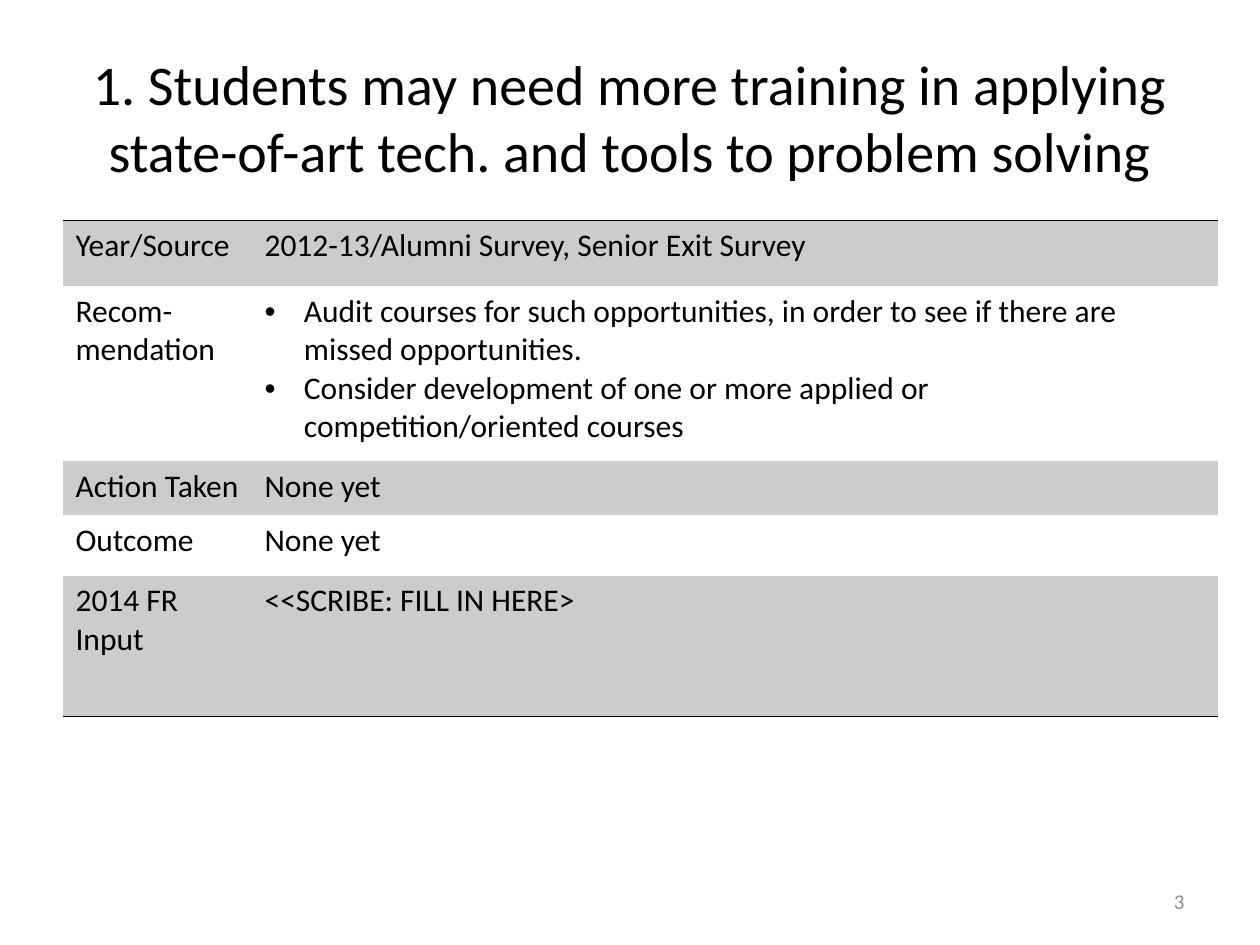
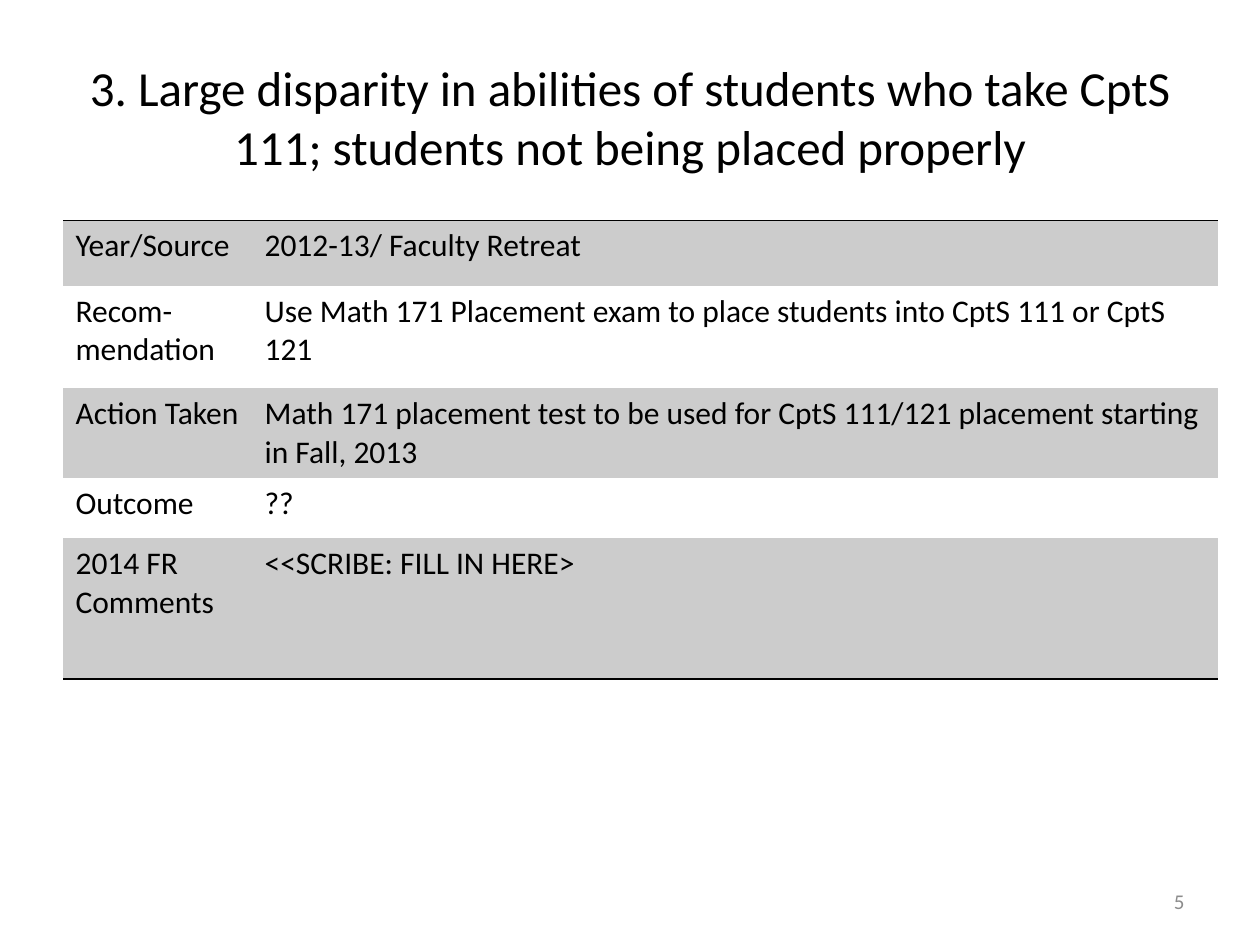
from lxml import etree
from pptx import Presentation
from pptx.dml.color import RGBColor
from pptx.enum.text import MSO_ANCHOR as ANCHOR, PP_ALIGN as ALIGN
from pptx.oxml import parse_xml
from pptx.oxml.ns import nsdecls, qn
from pptx.util import Pt

FONT = "Calibri"
BLACK, BAND, GREY = "000000", "CCCCCC", "8C8C8C"
PLAIN_TABLE_STYLE = "{2D5ABB26-0587-4C30-8999-92F81FD0307C}"
LEFT = 36
COLUMN_WIDTHS = (108, 552)
BULLET_INDENT = 22.5

SLIDES = [
    dict(
        title="1. Students may need more training in applying "
              "state-of-art tech. and tools to problem solving",
        title_size=32,
        number=3,
        row_heights=(37.5, 100, 31, 34.5, 80.5),
        rows=[
            ("Year/Source", "2012-13/Alumni Survey, Senior Exit Survey"),
            ("Recom-\nmendation", [
                "Audit courses for such opportunities, in order to see "
                "if there are missed opportunities.",
                "Consider development of one or more applied or "
                "competition/oriented courses",
            ]),
            ("Action Taken", "None yet"),
            ("Outcome", "None yet"),
            ("2014 FR Input", "<<SCRIBE: FILL IN HERE>"),
        ],
    ),
    dict(
        title="3. Large disparity in abilities of students who take "
              "CptS 111; students not being placed properly",
        title_size=28,
        number=5,
        row_heights=(37.5, 58.5, 31, 34.5, 80.5),
        rows=[
            ("Year/Source", "2012-13/ Faculty Retreat"),
            ("Recom-\nmendation",
             "Use Math 171 Placement exam to place students into "
             "CptS 111 or CptS 121"),
            ("Action Taken",
             "Math 171 placement test to be used for CptS 111/121 "
             "placement starting in Fall, 2013"),
            ("Outcome", "??"),
            ("2014 FR Comments", "<<SCRIBE: FILL IN HERE>"),
        ],
    ),
]


def rgb(color):
    return RGBColor.from_string(color)


def write(tf, text, size=18, color=BLACK, align=ALIGN.LEFT):
    """Write one paragraph per line, or bulleted paragraphs for a list."""
    bulleted = isinstance(text, list)
    lines = text if bulleted else text.split("\n")
    for i, line in enumerate(lines):
        p = tf.paragraphs[0] if i == 0 else tf.add_paragraph()
        p.alignment = align
        r = p.add_run()
        r.text = line
        r.font.name = FONT
        r.font.size = Pt(size)
        r.font.color.rgb = rgb(color)
        if bulleted:
            add_bullet(p)


def add_bullet(p):
    pPr = p._p.get_or_add_pPr()
    pPr.set("marL", str(Pt(BULLET_INDENT)))
    pPr.set("indent", str(-Pt(BULLET_INDENT)))
    etree.SubElement(pPr, qn("a:buFont")).set("typeface", "Arial")
    etree.SubElement(pPr, qn("a:buChar")).set("char", "•")


def add_rule(cell, side):
    """Draw a black line on the cell's top ("T") or bottom ("B") side."""
    cell._tc.get_or_add_tcPr().insert(0, parse_xml(
        f'<a:ln{side} {nsdecls("a")} w="{Pt(1)}"><a:solidFill>'
        f'<a:srgbClr val="{BLACK}"/></a:solidFill></a:ln{side}>'))


def set_title(slide, text, size):
    title = slide.shapes.title
    title.left, title.top = Pt(LEFT), Pt(21.6)
    title.width, title.height = Pt(648), Pt(90)
    title.text_frame.vertical_anchor = ANCHOR.MIDDLE
    write(title.text_frame, text, size=size, align=ALIGN.CENTER)


def add_review_table(slide, rows, row_heights):
    frame = slide.shapes.add_table(
        len(rows), len(COLUMN_WIDTHS), Pt(LEFT), Pt(126),
        Pt(sum(COLUMN_WIDTHS)), Pt(sum(row_heights)))
    table = frame.table
    table.first_row = table.horz_banding = False
    table._tbl.tblPr.find(qn("a:tableStyleId")).text = PLAIN_TABLE_STYLE
    for column, width in zip(table.columns, COLUMN_WIDTHS):
        column.width = Pt(width)
    for i, (row, height) in enumerate(zip(rows, row_heights)):
        table.rows[i].height = Pt(height)
        for j, text in enumerate(row):
            cell = table.cell(i, j)
            write(cell.text_frame, text)
            if i % 2 == 0:
                cell.fill.solid()
                cell.fill.fore_color.rgb = rgb(BAND)
            else:
                cell.fill.background()
            if i == 0:
                add_rule(cell, "T")
            if i == len(rows) - 1:
                add_rule(cell, "B")


def add_page_number(slide, number):
    sp = slide.shapes.add_textbox(Pt(516), Pt(500.5), Pt(168), Pt(28.75))
    tf = sp.text_frame
    tf.word_wrap = True
    tf.vertical_anchor = ANCHOR.MIDDLE
    write(tf, str(number), size=12, color=GREY, align=ALIGN.RIGHT)


def main():
    prs = Presentation()
    prs.slide_width, prs.slide_height = Pt(720), Pt(540)
    title_only = prs.slide_layouts[5]
    for content in SLIDES:
        slide = prs.slides.add_slide(title_only)
        set_title(slide, content["title"], content["title_size"])
        add_review_table(slide, content["rows"], content["row_heights"])
        add_page_number(slide, content["number"])
    prs.save("out.pptx")


if __name__ == "__main__":
    main()
